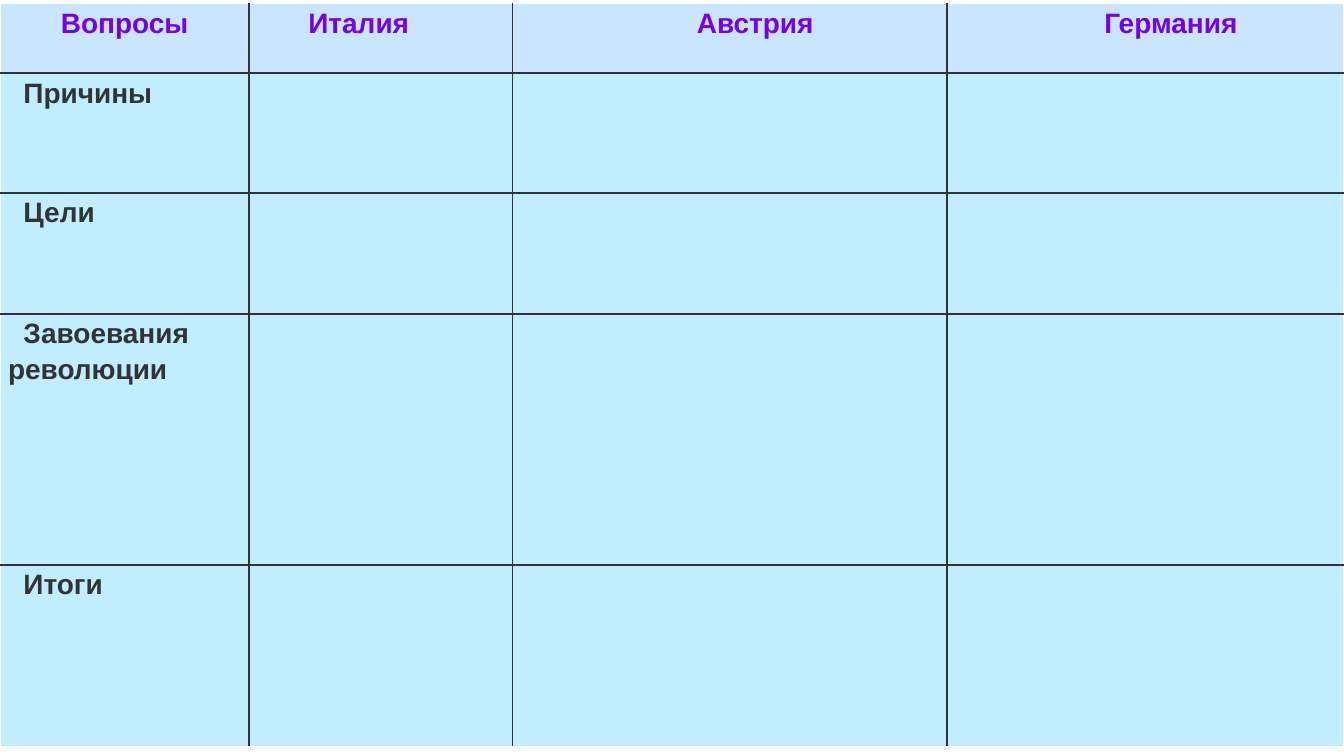
import dataclasses

import pptx
import pptx.dml.color
import pptx.enum.text
import pptx.oxml
import pptx.oxml.ns
import pptx.util

EMU_PER_PX = 4572  # 200 px to the inch
PAGE_SIZE = (2000, 1125)
TABLE_TOP = 5
COLUMN_WIDTHS = (371, 392, 646, 591)
ROW_HEIGHTS = (104, 178, 180, 374, 270)
CELL_MARGINS = {"margin_left": 12, "margin_right": 12, "margin_top": 0, "margin_bottom": 0}

LEFT = pptx.enum.text.PP_ALIGN.LEFT
CENTER = pptx.enum.text.PP_ALIGN.CENTER
# Header text, alignment, left margin and first-line indent
HEADERS = (
    ("Вопросы", CENTER, 58, -58),
    ("Италия", LEFT, 76, 0),
    ("Австрия", CENTER, 76, 0),
    ("Германия", CENTER, 76, 0),
)
QUESTIONS = ("Причины", "Цели", "Завоевания революции", "Итоги")
QUESTION_INDENT = 23


@dataclasses.dataclass(frozen=True)
class Theme:
    font: str = "Arial"
    text_size: int = 15
    line_spacing: float = 1.15
    border_width: int = 1
    header_text: str = "7700E9"
    body_text: str = "333333"
    header_fill: str = "C9E5FF"
    body_fill: str = "C0EDFF"
    inner_border: str = "333333"
    outer_border: str = "FFFFFF"


THEME = Theme()


def px(length):
    return pptx.util.Emu(length * EMU_PER_PX)


def rgb(value):
    return pptx.dml.color.RGBColor.from_string(value)


def set_format(target, values):
    for name, value in values.items():
        setattr(target, name, value)


def add_border(cell, side, color):
    """Draw one side (L, R, T or B) of a cell."""
    width = pptx.util.Pt(THEME.border_width)
    line = pptx.oxml.parse_xml(
        f'<a:ln{side} {pptx.oxml.ns.nsdecls("a")} w="{width}">'
        f'<a:solidFill><a:srgbClr val="{color}"/></a:solidFill></a:ln{side}>'
    )
    cell._tc.get_or_add_tcPr().append(line)


def style_cell(cell, row, column):
    """Give the table's outer edge a light border and all inner edges a dark one."""
    outer_sides = {
        "L": column == 0,
        "R": column == len(COLUMN_WIDTHS) - 1,
        "T": row == 0,
        "B": row == len(ROW_HEIGHTS) - 1,
    }
    for side, is_outer in outer_sides.items():
        add_border(cell, side, THEME.outer_border if is_outer else THEME.inner_border)
    cell.fill.solid()
    cell.fill.fore_color.rgb = rgb(THEME.header_fill if row == 0 else THEME.body_fill)
    set_format(cell, {name: px(length) for name, length in CELL_MARGINS.items()})


def write_cell(cell, text, color, alignment=LEFT, margin=0, indent=0):
    para = cell.text_frame.paragraphs[0]
    properties = para._p.get_or_add_pPr()
    properties.set("marL", str(px(margin)))
    properties.set("indent", str(px(indent)))
    set_format(para, {"alignment": alignment, "line_spacing": THEME.line_spacing})
    span = para.add_run()
    span.text = text
    set_format(span.font, {
        "name": THEME.font,
        "size": pptx.util.Pt(THEME.text_size),
        "bold": True,
    })
    span.font.color.rgb = rgb(color)


def add_grid(page):
    table = page.shapes.add_table(
        len(ROW_HEIGHTS), len(COLUMN_WIDTHS), px(0), px(TABLE_TOP),
        px(sum(COLUMN_WIDTHS)), px(sum(ROW_HEIGHTS)),
    ).table
    set_format(table, {"first_row": False, "horz_banding": False})
    for column, width in zip(table.columns, COLUMN_WIDTHS):
        column.width = px(width)
    for row, height in zip(table.rows, ROW_HEIGHTS):
        row.height = px(height)
    for row in range(len(ROW_HEIGHTS)):
        for column in range(len(COLUMN_WIDTHS)):
            style_cell(table.cell(row, column), row, column)
    return table


def main():
    deck = pptx.Presentation()
    deck.slide_width, deck.slide_height = map(px, PAGE_SIZE)
    page = deck.slides.add_slide(deck.slide_layouts[6])
    table = add_grid(page)
    for column, (text, alignment, margin, indent) in enumerate(HEADERS):
        write_cell(table.cell(0, column), text, THEME.header_text, alignment, margin, indent)
    for row, text in enumerate(QUESTIONS, start=1):
        write_cell(table.cell(row, 0), text, THEME.body_text, indent=QUESTION_INDENT)
    deck.save("out.pptx")


if __name__ == "__main__":
    main()
